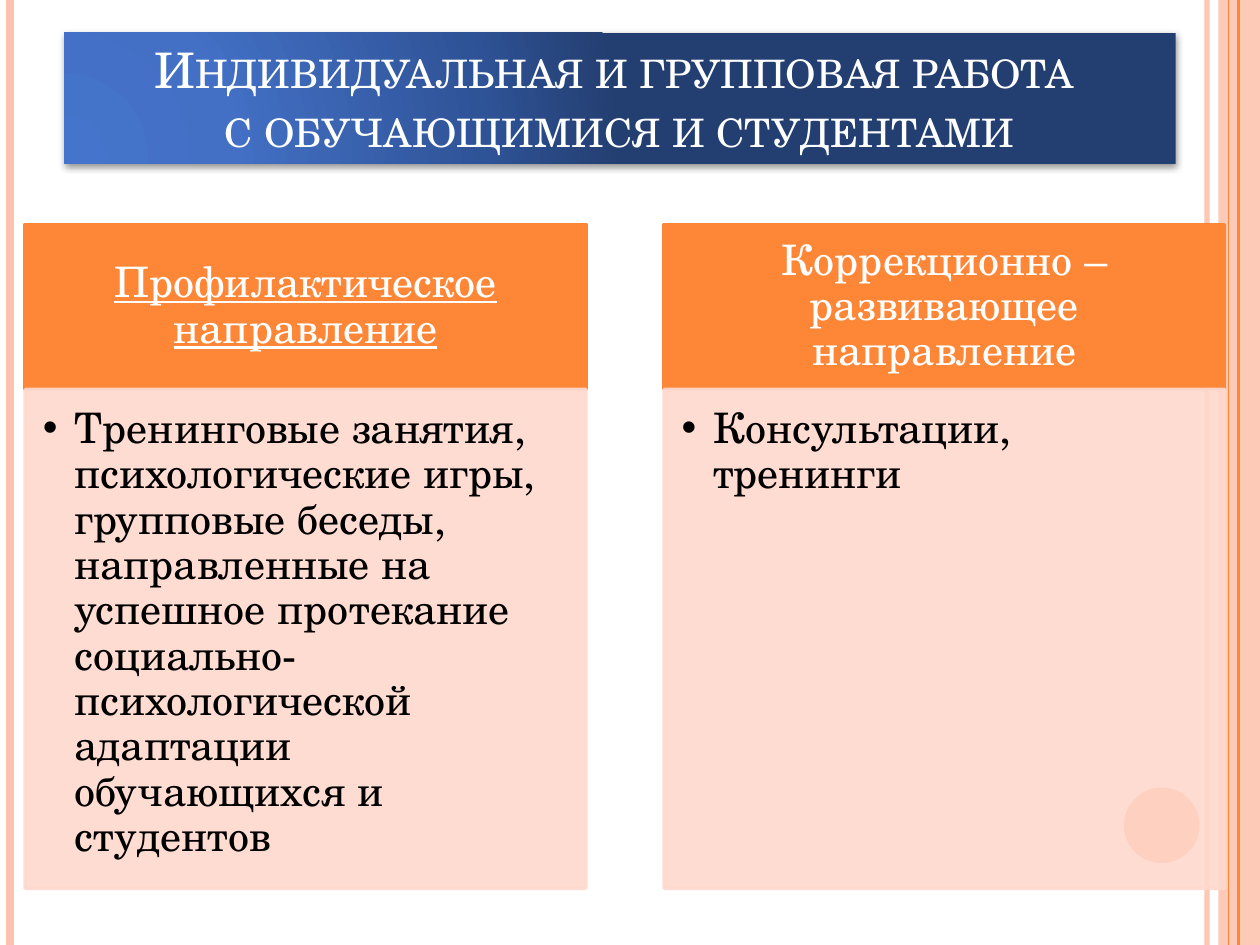
from typing import NamedTuple

from lxml import etree
from pptx import Presentation
from pptx.dml.color import RGBColor
from pptx.enum.shapes import MSO_CONNECTOR, MSO_SHAPE
from pptx.enum.text import MSO_ANCHOR, MSO_AUTO_SIZE, PP_ALIGN
from pptx.oxml import parse_xml
from pptx.oxml.ns import nsdecls, qn
from pptx.util import Inches, Pt

RECT, OVAL = MSO_SHAPE.RECTANGLE, MSO_SHAPE.OVAL
STRAIGHT = MSO_CONNECTOR.STRAIGHT
TOP, MIDDLE, BOTTOM = MSO_ANCHOR.TOP, MSO_ANCHOR.MIDDLE, MSO_ANCHOR.BOTTOM
LEFT, CENTER = PP_ALIGN.LEFT, PP_ALIGN.CENTER
FONT = "TeX Gyre Schola"
ORANGE, PEACH, PINK = "FE8637", "FEC3AE", "FFD9CE"
WHITE, BLACK = "FFFFFF", "000000"
COMPARE = 4
WIDE, GAP, EDGE = 4.45, 0.62, 0.2
HEAD_TOP, HEAD_HIGH, BODY_HIGH = 1.78, 1.31, 3.96


class Stripe(NamedTuple):
    x: float
    color: str
    width: float
    alpha: int = 100


class Column(NamedTuple):
    head: str
    body: str
    under: bool


STRIPES = [
    Stripe(9.58, PEACH, 3, 93),
    Stripe(0.08, PEACH, 4.5),
    Stripe(9.83, ORANGE, 1.5),
    Stripe(9.75, ORANGE, 0.75),
]
COLUMNS = [
    Column("Профилактическое направление",
           "Тренинговые занятия, психологические игры, групповые беседы, "
           "направленные на успешное протекание социально-психологической "
           "адаптации обучающихся и студентов", True),
    Column("Коррекционно – развивающее направление",
           "Консультации, тренинги", False),
]
STOPS = [(0, "4574CC"), (30, "4370C5"), (75, "2F5397"), (100, "233E70")]


def paint(fill, color: str, alpha: int = 100) -> None:
    """Make a fill solid, with its opacity in percent."""
    fill.solid()
    fill.fore_color.rgb = RGBColor.from_string(color)
    if alpha < 100:
        # The fill's own colour node is the last one written below its parent.
        node = fill._xPr.find(qn("a:solidFill")).find(qn("a:srgbClr"))
        etree.SubElement(node, qn("a:alpha")).set("val", str(alpha * 1000))


def place(shape, x: float, y: float, w: float, h: float) -> None:
    """Move a placeholder and bring it to the front."""
    shape.left, shape.top = Inches(x), Inches(y)
    shape.width, shape.height = Inches(w), Inches(h)
    shape.element.getparent().append(shape.element)


def write(shape, text: str, *, size: float, color: str, anchor=TOP,
          align=LEFT, inset=(0.1, 0.05, 0.1, 0.05), spacing: float = 1,
          under: bool = False, caps: bool = False,
          bullet: bool = False) -> None:
    frame = shape.text_frame
    frame.word_wrap = True
    frame.auto_size = MSO_AUTO_SIZE.NONE
    frame.vertical_anchor = anchor
    (frame.margin_left, frame.margin_top,
     frame.margin_right, frame.margin_bottom) = map(Inches, inset)
    para = frame.paragraphs[0]
    para.text = text
    if bullet:
        props = para._p.get_or_add_pPr()
        props.set("marL", str(Inches(0.25)))
        props.set("indent", str(-Inches(0.25)))
        etree.SubElement(props, qn("a:buChar")).set("char", "•")
    para.alignment = align
    para.line_spacing = spacing
    para.space_before = Pt(0)
    for run in para.runs:
        font = run.font
        font.name, font.size = FONT, Pt(size)
        font.bold, font.underline = False, under
        font.color.rgb = RGBColor.from_string(color)
        if caps:
            run._r.get_or_add_rPr().set("cap", "small")


def draw_stripe(slide, stripe: Stripe) -> None:
    x = Inches(stripe.x)
    line = slide.shapes.add_connector(STRAIGHT, x, 0, x, Inches(7.5))
    line.line.width = Pt(stripe.width)
    paint(line.line.fill, stripe.color, stripe.alpha)
    etree.SubElement(line.element.spPr, qn("a:effectLst"))


def draw_plain(slide, kind, box: tuple, color: str, alpha: int = 100) -> None:
    shape = slide.shapes.add_shape(kind, *map(Inches, box))
    shape.shadow.inherit = False
    paint(shape.fill, color, alpha)
    shape.line.fill.background()


def draw_panel(shape, box: tuple, color: str, alpha: int = 100) -> None:
    place(shape, *box)
    paint(shape.fill, color, alpha)
    shape.line.width = Pt(2)
    paint(shape.line.fill, color, alpha)


def draw_column(slide, index: int, column: Column) -> None:
    head, body = (slide.placeholders[2 * index + n] for n in (1, 2))
    x = EDGE + index * (WIDE + GAP)
    draw_panel(head, (x, HEAD_TOP, WIDE, HEAD_HIGH), ORANGE)
    write(head, column.head, size=24, color=WHITE, anchor=MIDDLE,
          align=CENTER, inset=(0.19, 0.11, 0.19, 0.11), spacing=0.9,
          under=column.under)
    draw_panel(body, (x, HEAD_TOP + HEAD_HIGH, WIDE, BODY_HIGH), PINK, 90)
    write(body, column.body, size=24, color=BLACK,
          inset=(0.14, 0.14, 0.19, 0.21), spacing=0.9, bullet=True)


def draw_title(slide) -> None:
    title = slide.shapes.title
    place(title, 0.51, 0.26, 8.82, 1.04)
    stops = "".join(f'<a:gs pos="{pos * 1000}"><a:srgbClr val="{color}"/></a:gs>'
                    for pos, color in STOPS)
    props = title.element.spPr
    props.append(parse_xml(
        f'<a:gradFill {nsdecls("a")} rotWithShape="1"><a:gsLst>{stops}</a:gsLst>'
        '<a:path path="circle"><a:fillToRect l="5000" t="100000" r="120000" '
        'b="10000"/></a:path></a:gradFill>'))
    props.append(parse_xml(
        f'<a:effectLst {nsdecls("a")}><a:outerShdw blurRad="{Pt(4)}" '
        f'dist="{Pt(1.6)}" dir="5400000" rotWithShape="0">'
        f'<a:srgbClr val="{BLACK}"><a:alpha val="42000"/></a:srgbClr>'
        '</a:outerShdw></a:effectLst>'))
    write(title, "Индивидуальная и групповая работа \vс обучающимися и студентами",
          size=28, color=WHITE, anchor=BOTTOM, align=CENTER, caps=True)


def main() -> None:
    deck = Presentation()
    deck.slide_width, deck.slide_height = Inches(10), Inches(7.5)
    slide = deck.slides.add_slide(deck.slide_layouts[COMPARE])
    draw_plain(slide, RECT, (9.67, 0, 0.33, 7.5), PEACH, 87)
    for stripe in STRIPES:
        draw_stripe(slide, stripe)
    draw_plain(slide, OVAL, (8.92, 6.25, 0.6, 0.6), ORANGE)
    for index, column in enumerate(COLUMNS):
        draw_column(slide, index, column)
    draw_title(slide)
    deck.save("out.pptx")


if __name__ == "__main__":
    main()
